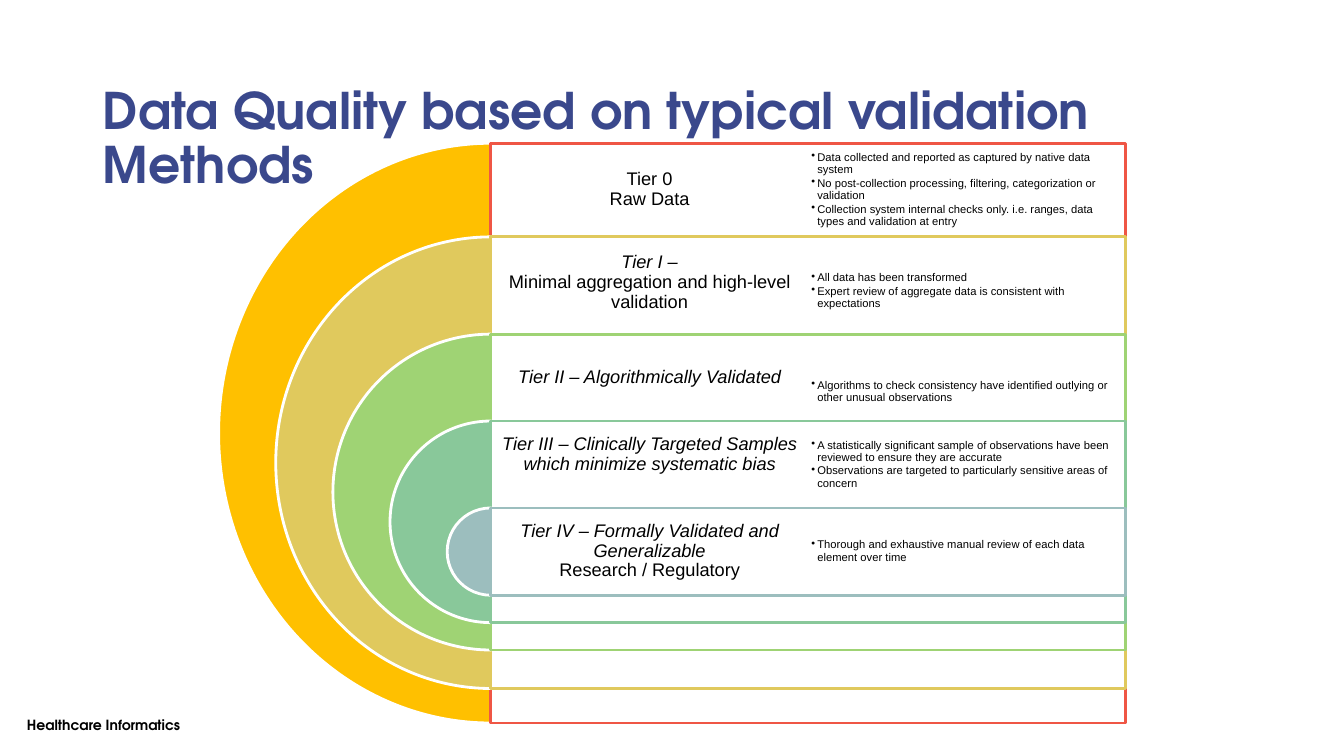
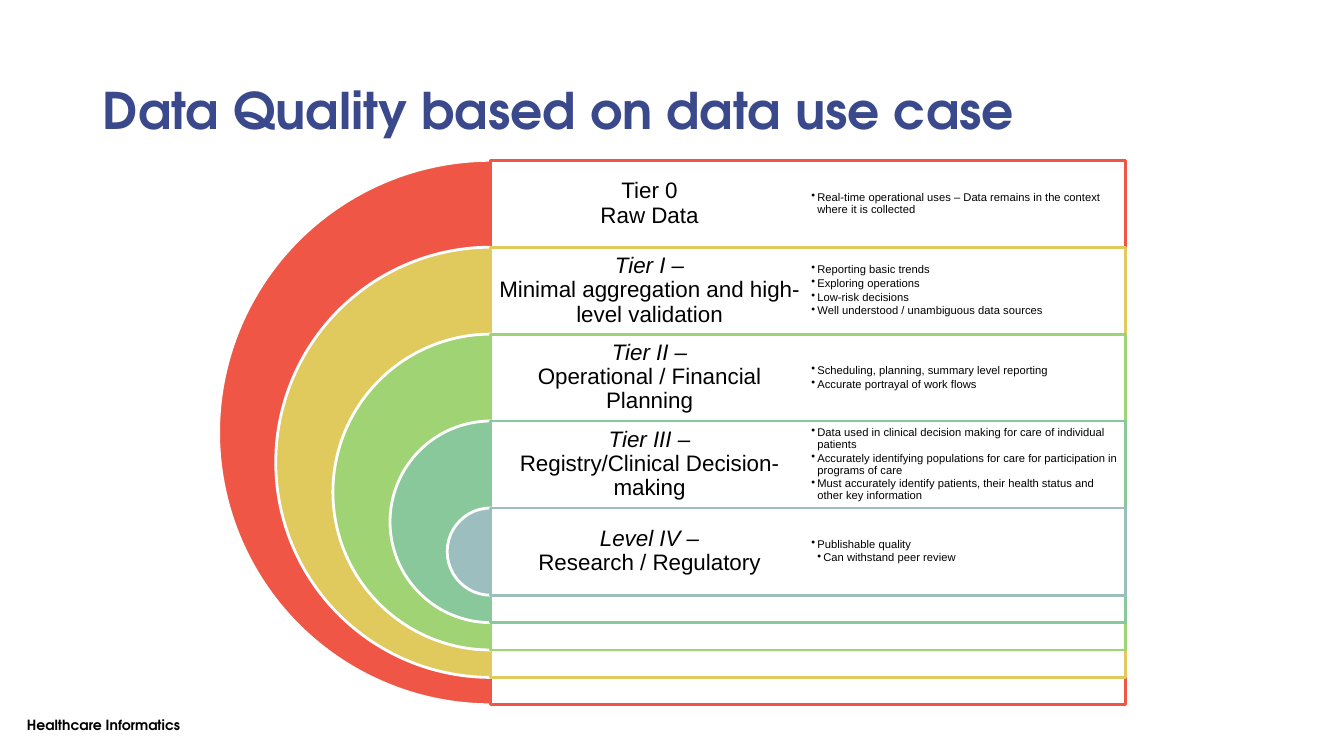
import dataclasses

import lxml.etree
import pptx
import pptx.chart.data
import pptx.dml.color
import pptx.enum.shapes
import pptx.enum.text
import pptx.oxml.ns
import pptx.util

Cm = pptx.util.Cm
Pt = pptx.util.Pt
Kind = pptx.enum.shapes.MSO_SHAPE
Align = pptx.enum.text.PP_ALIGN
Anchor = pptx.enum.text.MSO_ANCHOR
qn = pptx.oxml.ns.qn


@dataclasses.dataclass(frozen=True)
class Theme:
    head: str = "TeX Gyre Adventor"
    body: str = "Arial"
    navy: str = "3A488C"
    black: str = "000000"
    white: str = "FFFFFF"
    gold: str = "FFC000"
    rings: tuple = ("EF5645", "E0C95D", "9FD374", "89C89A", "9CBEBE")
    title: int = 36
    foot: int = 10
    note: int = 8
    edge: int = 2


@dataclasses.dataclass(frozen=True)
class Tier:
    lines: tuple
    notes: tuple
    slant: bool = True
    band: tuple = None
    lift: float = 0
    sink: float = 0
    sub: int = None


@dataclasses.dataclass(frozen=True)
class Page:
    title: str
    size: int
    pad: float
    tiers: tuple
    outer: str


THEME = Theme()
STACK = (12.37, 4.04, 16, 13.72)
STEP = 2.19
SHRINK = 2.88

PAGES = (
    Page("Data Quality based on typical validation Methods", 13, 0.13, (
        Tier(("Tier 0", "Raw Data"), (
            "Data collected and reported as captured by native data system",
            "No post-collection processing, filtering, categorization or validation",
            "Collection system internal checks only. i.e. ranges, data types and validation at entry",
        ), slant=False, band=(3.61, 14.61, 2.34)),
        Tier(("Tier I –", "Minimal aggregation and high-level validation"), (
            "All data has been transformed",
            "Expert review of aggregate data is consistent with expectations",
        ), band=(5.97, 11.38, 2.31), sink=0.43),
        Tier(("Tier II – Algorithmically Validated",), (
            "Algorithms to check consistency have identified outlying or other unusual observations",
        ), sink=0.71),
        Tier(("Tier III – Clinically Targeted Samples which minimize systematic bias",), (
            "A statistically significant sample of observations have been reviewed to ensure they are accurate",
            "Observations are targeted to particularly sensitive areas of concern",
        ), lift=0.5),
        Tier(("Tier IV – Formally Validated and Generalizable", "Research / Regulatory"), (
            "Thorough and exhaustive manual review of each data element over time",
        )),
    ), THEME.gold),
    Page("Data Quality based on data use case", 16, 0.18, (
        Tier(("Tier 0", "Raw Data"), (
            "Real-time operational uses – Data remains in the context where it is collected",
        ), slant=False),
        Tier(("Tier I –", "Minimal aggregation and high-level validation"), (
            "Reporting basic trends",
            "Exploring operations",
            "Low-risk decisions",
            "Well understood / unambiguous data sources",
        )),
        Tier(("Tier II –", "Operational / Financial Planning"), (
            "Scheduling, planning, summary level reporting",
            "Accurate portrayal of work flows",
        )),
        Tier(("Tier III –", "Registry/Clinical Decision-making"), (
            "Data used in clinical decision making for care of individual patients",
            "Accurately identifying populations for care for participation in programs of care",
            "Must accurately identify patients, their health status and other key information",
        )),
        Tier(("Level IV –", "Research / Regulatory"), (
            "Publishable quality",
            "Can withstand peer review",
        ), sub=1),
    ), THEME.rings[0]),
)


def tint(code):
    return pptx.dml.color.RGBColor.from_string(code)


def place(shape, box):
    shape.left, shape.top, shape.width, shape.height = map(Cm, box)


def style(para, face, size, code, bold=False):
    para.font.name = face
    para.font.size = Pt(size)
    para.font.bold = bold
    para.font.color.rgb = tint(code)


def frame(shape, pads, anchor):
    text = shape.text_frame
    text.word_wrap = True
    text.auto_size = pptx.enum.text.MSO_AUTO_SIZE.NONE
    text.vertical_anchor = anchor
    (text.margin_left, text.margin_top,
     text.margin_right, text.margin_bottom) = map(Cm, pads)
    return text


def write(slide, box, pads, anchor=Anchor.MIDDLE):
    return frame(slide.shapes.add_textbox(*map(Cm, box)), pads, anchor)


def solid(slide, kind, box, fill, line):
    shape = slide.shapes.add_shape(kind, *map(Cm, box))
    shape.shadow.inherit = False
    shape.fill.solid()
    shape.fill.fore_color.rgb = tint(fill)
    shape.line.color.rgb = tint(line)
    shape.line.width = Pt(THEME.edge)
    return shape


def ring(slide, mid, top, side, high, fill):
    pie = solid(slide, Kind.PIE, (mid - side / 2, top, side, high), fill, THEME.white)
    pie.adjustments[0] = 54
    pie.adjustments[1] = 162


def panel(slide, box, line):
    shape = solid(slide, Kind.RECTANGLE, box, THEME.white, line)
    color = shape.fill._xPr.find(qn("a:solidFill"))[0]
    lxml.etree.SubElement(color, qn("a:alpha"), val="90000")


def label(slide, box, page, tier):
    pad = page.pad
    para = write(slide, box, (pad, pad, pad, pad + tier.lift)).paragraphs[0]
    para.alignment = Align.CENTER
    para.line_spacing = 0.9
    style(para, THEME.body, page.size, THEME.black)
    for rank, line in enumerate(tier.lines):
        if rank:
            para.add_line_break()
        run = para.add_run()
        run.text = line
        run.font.italic = tier.slant and rank == 0


def notes(slide, box, tier):
    pad = 0.08
    text = write(slide, box, (pad, pad + tier.sink, pad, pad))
    for rank, note in enumerate(tier.notes):
        para = text.paragraphs[0] if rank == 0 else text.add_paragraph()
        para.text = note
        para.level = int(rank == tier.sub)
        props = para._p.get_or_add_pPr()
        props.set("marL", str(Cm(0.15 * (para.level + 1))))
        props.set("indent", str(Cm(-0.15)))
        lxml.etree.SubElement(props, qn("a:buChar"), char="•")
        para.line_spacing = 0.9
        para.space_after = Pt(1.2)
        style(para, THEME.body, THEME.note, THEME.black)


def stack(slide, box, page):
    left, start, width, full = box
    half = width / 2
    for rank, tier in enumerate(page.tiers):
        side = full - rank * SHRINK
        top, high, row = tier.band or (start + rank * STEP, side, STEP)
        hue = THEME.rings[rank]
        ring(slide, left, top, side, high, hue if rank else page.outer)
        panel(slide, (left, top, width, high), hue)
        label(slide, (left, top, half, row), page, tier)
        notes(slide, (left + half, top, half, row), tier)


def head(slide, box, words):
    shape = slide.shapes.title
    place(shape, box)
    text = frame(shape, (0.25, 0.13, 0.25, 0.13), Anchor.TOP)
    para = text.paragraphs[0]
    para.text = words
    para.alignment = Align.LEFT
    para.line_spacing = 0.9
    style(para, THEME.head, THEME.title, THEME.navy, True)


def foot(slide, box):
    text = write(slide, box, (0.25, 0.13, 0.25, 0.13), Anchor.TOP)
    para = text.paragraphs[0]
    para.text = "Healthcare Informatics"
    style(para, THEME.head, THEME.foot, THEME.black, True)


def main():
    deck = pptx.Presentation()
    deck.slide_width = Cm(33.87)
    deck.slide_height = Cm(19.05)
    for page in PAGES:
        slide = deck.slides.add_slide(deck.slide_layouts[5])
        foot(slide, (0.43, 17.93, 6.38, 0.69))
        head(slide, (2.34, 2.03, 29.21, 1.65), page.title)
        stack(slide, STACK, page)
    deck.save("out.pptx")


if __name__ == "__main__":
    main()
